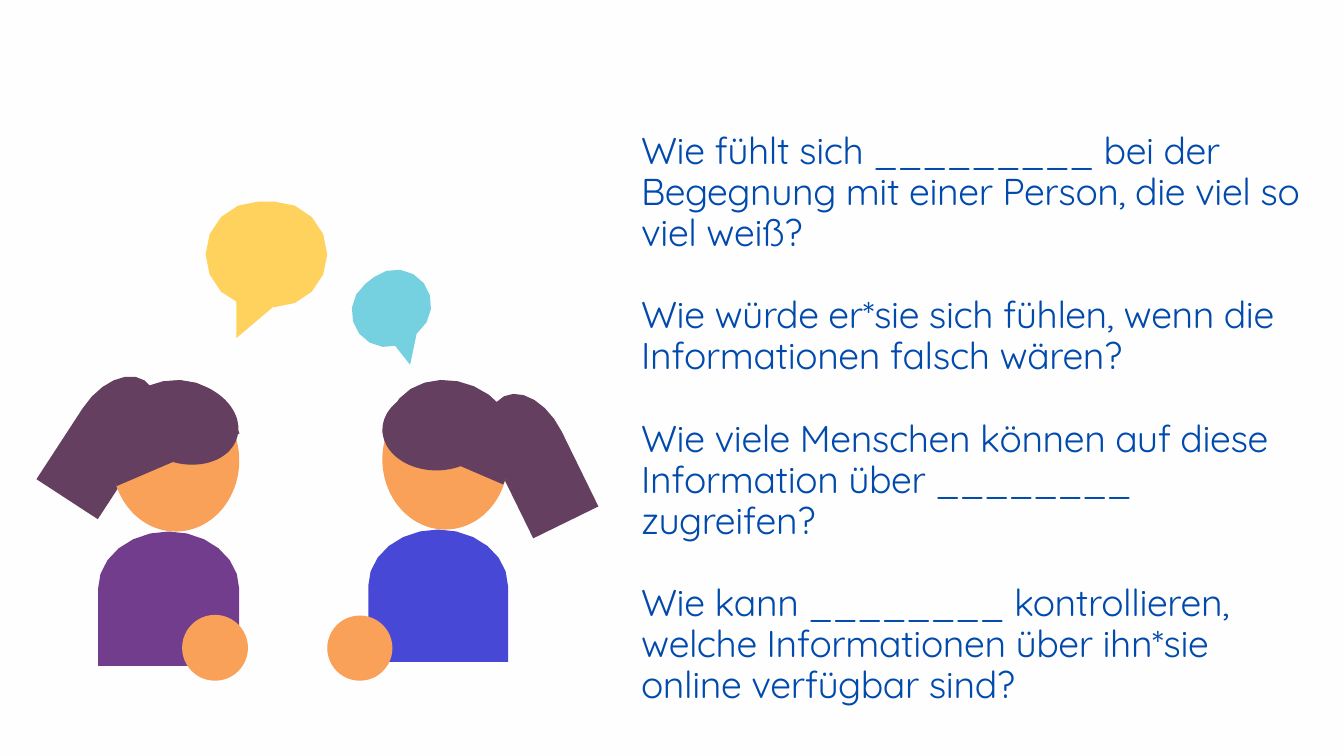
from math import cos, radians, sin

from pptx import Presentation
from pptx.dml.color import RGBColor
from pptx.enum.shapes import MSO_SHAPE
from pptx.enum.text import MSO_AUTO_SIZE
from pptx.util import Inches, Pt

OVAL = MSO_SHAPE.OVAL
FIT_TEXT = MSO_AUTO_SIZE.SHAPE_TO_FIT_TEXT

HAIR = "643F5F"
SKIN = "F9A159"

QUESTIONS = [
    "Wie fühlt sich _________ bei der Begegnung mit einer Person, die viel so viel weiß?",
    "Wie würde er*sie sich fühlen, wenn die Informationen falsch wären?",
    "Wie viele Menschen können auf diese Information über ________ zugreifen?",
    "Wie kann ________ kontrollieren, welche Informationen über ihn*sie online verfügbar sind?",
]


def paint(fill, color):
    fill.solid()
    fill.fore_color.rgb = RGBColor.from_string(color)


def finish(shape, color, rotation):
    paint(shape.fill, color)
    shape.line.fill.background()
    shape.shadow.inherit = False
    shape.rotation = rotation


def add_oval(slide, box, color, rotation=0):
    shape = slide.shapes.add_shape(OVAL, *map(Inches, box))
    finish(shape, color, rotation)


def arc(center_x, center_y, radius_x, radius_y, start, end, steps):
    """Points on an ellipse; angles in degrees, clockwise from the right."""
    angles = [radians(start + (end - start) * i / steps) for i in range(steps + 1)]
    return [(center_x + radius_x * cos(a), center_y + radius_y * sin(a)) for a in angles]


def add_outline(slide, box, unit_points, color, rotation=0):
    """Stretch an outline drawn in a 1 by 1 square over the box."""
    left, top, width, height = box
    points = [(Inches(left + x * width), Inches(top + y * height)) for x, y in unit_points]
    builder = slide.shapes.build_freeform(*points[0], scale=1.0)
    builder.add_line_segments(points[1:], close=True)
    finish(builder.convert_to_shape(), color, rotation)


def add_dome(slide, box, arch_height, color, rotation=0):
    """Rectangle whose top is half an ellipse."""
    arch = arch_height / box[3]
    outline = arc(0.5, arch, 0.5, arch, 180, 360, steps=12) + [(1, 1), (0, 1)]
    add_outline(slide, box, outline, color, rotation)


def add_speech_bubble(slide, box, color, rotation=0):
    radius_x, radius_y = 0.434, 0.387
    right_side = arc(1 - radius_x, radius_y, radius_x, radius_y, 90, -90, steps=8)
    left_side = arc(radius_x, radius_y, radius_x, radius_y, 270, 135, steps=6)
    tail = [(0.254, 0.734), (0.254, 1), (0.553, 2 * radius_y)]
    add_outline(slide, box, right_side + left_side + tail, color, rotation)


def add_text(slide, box, paragraphs, *, font, size, color, leading, gap, tracking):
    frame = slide.shapes.add_textbox(*map(Inches, box)).text_frame
    frame.word_wrap = True
    frame.auto_size = FIT_TEXT
    frame.margin_left = frame.margin_right = 0
    frame.margin_top = frame.margin_bottom = 0
    for index, text in enumerate(paragraphs):
        paragraph = frame.paragraphs[0] if index == 0 else frame.add_paragraph()
        paragraph.line_spacing = Pt(leading)
        paragraph.space_before = Pt(gap if index else 0)
        run = paragraph.add_run()
        run.text = text
        run.font.name = font
        run.font.size = Pt(size)
        run.font.color.rgb = RGBColor.from_string(color)
        run.font._element.set("spc", str(round(tracking * 100)))


def add_right_person(slide):
    add_dome(slide, (7.42, 5.79, 1.08, 2.09), 0.85, HAIR, 333.9)
    add_oval(slide, (5.69, 5.79, 1.87, 2.09), SKIN)
    add_dome(slide, (5.48, 7.88, 2.08, 1.97), 0.84, "4748D6")
    add_oval(slide, (4.87, 9.16, 0.97, 0.97), SKIN)
    add_dome(slide, (5.84, 5.7, 1.96, 1.17), 0.82, HAIR, 23.3)
    add_oval(slide, (5.69, 5.79, 1.61, 1.21), HAIR)


def add_left_person(slide):
    add_dome(slide, (1.03, 5.49, 1.09, 2.11), 0.85, HAIR, 33.1)
    add_oval(slide, (1.67, 5.8, 1.89, 2.11), SKIN)
    add_dome(slide, (1.46, 7.91, 2.1, 2), 0.85, "733D8D")
    add_oval(slide, (2.71, 9.15, 0.98, 0.98), SKIN)
    add_dome(slide, (1.42, 5.7, 1.99, 1.19), 0.84, HAIR, 336.8)
    add_oval(slide, (1.93, 5.68, 1.63, 1.22), HAIR, 14.7)


def main():
    deck = Presentation()
    deck.slide_width, deck.slide_height = Inches(20), Inches(11.25)
    slide = deck.slides.add_slide(deck.slide_layouts.get_by_name("Blank"))
    paint(slide.background.fill, "FFFEFE")

    add_text(slide, (9.54, 1.95, 9.89, 8.61), QUESTIONS, font="Quicksand", size=40,
             color="004AAD", leading=44, gap=44, tracking=-0.4)
    add_right_person(slide)
    add_left_person(slide)
    add_speech_bubble(slide, (3.06, 3, 1.81, 2.03), "FFD25E")
    add_speech_bubble(slide, (5.31, 4.03, 1.22, 1.36), "75D0DF", 321.9)

    deck.save("out.pptx")


if __name__ == "__main__":
    main()
